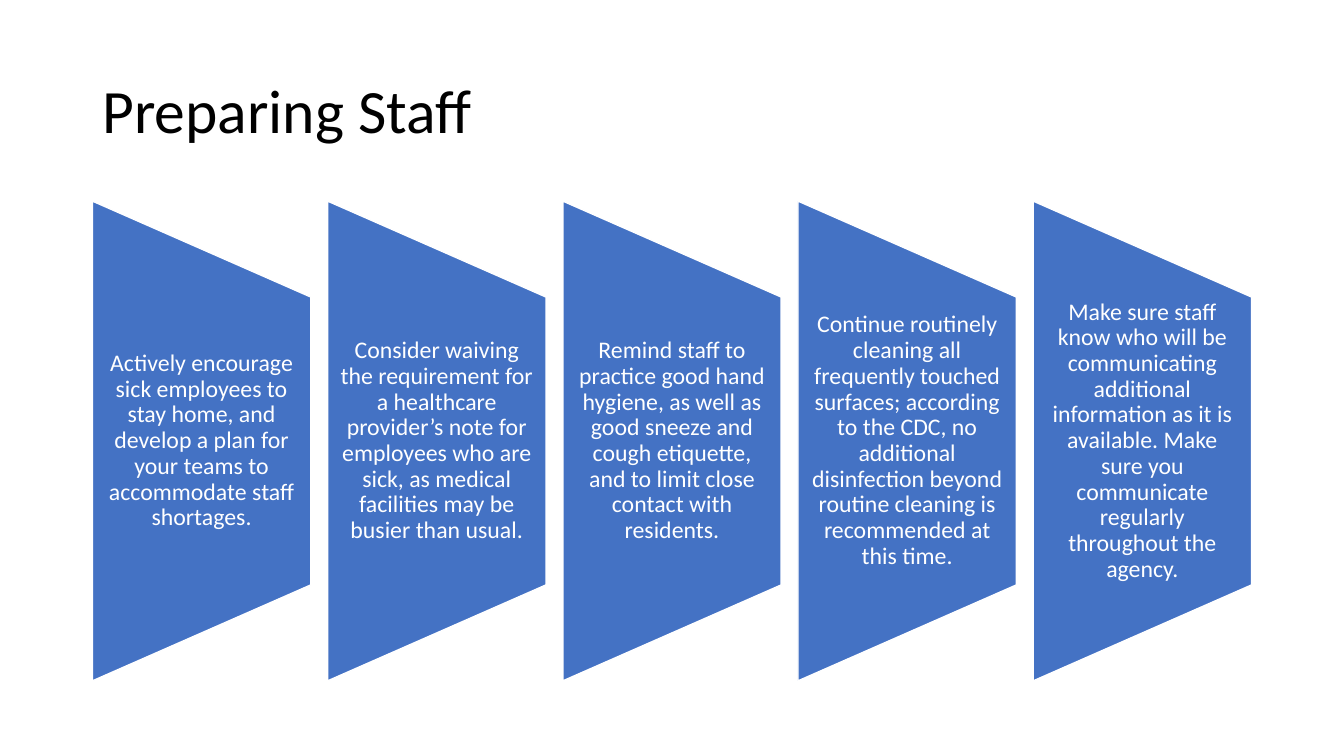
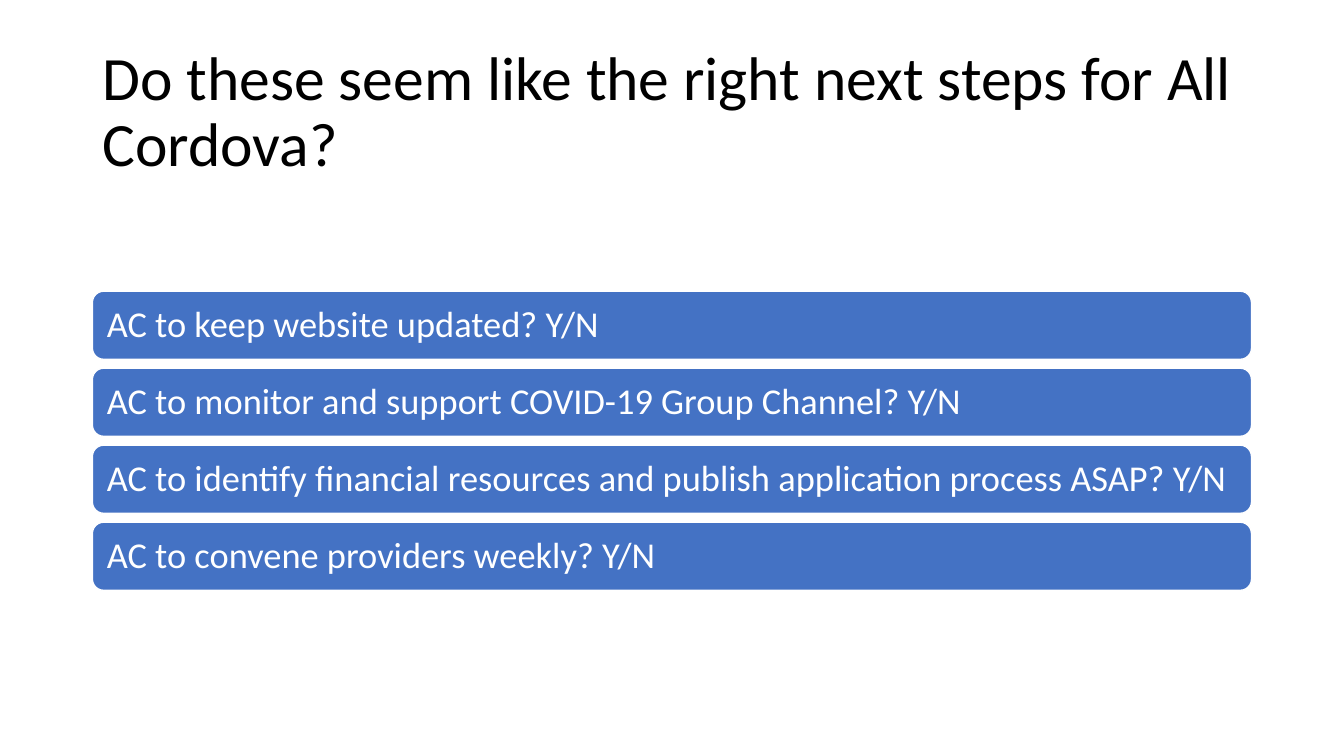
from dataclasses import dataclass

from pptx import Presentation
from pptx.dml.color import RGBColor
from pptx.enum.shapes import MSO_SHAPE as SHAPE
from pptx.enum.text import MSO_ANCHOR as ANCHOR, MSO_AUTO_SIZE as AUTO, PP_ALIGN as ALIGN
from pptx.shapes.autoshape import Shape
from pptx.slide import Slide
from pptx.util import Pt

BLACK, WHITE, BLUE = "000000", "FFFFFF", "4472C4"
FONT = "Calibri"
LEFT, WIDTH = 66, 828


@dataclass(frozen=True)
class Box:
    left: float
    top: float
    width: float
    height: float


@dataclass(frozen=True)
class TextStyle:
    size: float
    color: str
    align: ALIGN = ALIGN.LEFT
    inset_x: float = 7.2
    inset_y: float = 3.6


TITLE_BOX = Box(LEFT, 28.8, WIDTH, 104.4)
TITLE = TextStyle(44, BLACK)
PANEL = TextStyle(17, WHITE, ALIGN.CENTER, 8.6, 0)
BAR = TextStyle(26, WHITE, inset_x=8, inset_y=0)

PANEL_TOP, PANEL_WIDTH, PANEL_HEIGHT = 143.65, 156, 342.7
BAR_TOP, BAR_HEIGHT, BAR_PITCH = 208, 48.7, 55

STAFF_ACTIONS = [
    "Actively encourage sick employees to stay home, and develop a plan for your "
    "teams to accommodate staff shortages.",
    "Consider waiving the requirement for a healthcare provider’s note for employees "
    "who are sick, as medical facilities may be busier than usual.",
    "Remind staff to practice good hand hygiene, as well as good sneeze and cough "
    "etiquette, and to limit close contact with residents.",
    "Continue routinely cleaning all frequently touched surfaces; according to the "
    "CDC, no additional disinfection beyond routine cleaning is recommended at this time.",
    "Make sure staff know who will be communicating additional information as it is "
    "available. Make sure you communicate regularly throughout the agency.",
]
NEXT_STEPS = [
    "AC to keep website updated? Y/N",
    "AC to monitor and support COVID-19 Group Channel? Y/N",
    "AC to identify financial resources and publish application process ASAP? Y/N",
    "AC to convene providers weekly? Y/N",
]


def rgb(color: str) -> RGBColor:
    return RGBColor.from_string(color)


def set_all(target: object, values: dict) -> None:
    for name, value in values.items():
        setattr(target, name, value)


def pts(box: Box) -> tuple:
    return Pt(box.left), Pt(box.top), Pt(box.width), Pt(box.height)


def write(sp: Shape, text: str, style: TextStyle) -> None:
    tf = sp.text_frame
    set_all(tf, {
        "text": text, "word_wrap": True, "auto_size": AUTO.NONE,
        "vertical_anchor": ANCHOR.MIDDLE,
        "margin_left": Pt(style.inset_x), "margin_right": Pt(style.inset_x),
        "margin_top": Pt(style.inset_y), "margin_bottom": Pt(style.inset_y),
    })
    p = tf.paragraphs[0]
    set_all(p, {"alignment": style.align, "line_spacing": 0.9, "space_before": Pt(0)})
    r = p.runs[0]
    set_all(r.font, {"name": FONT, "size": Pt(style.size)})
    r.font.color.rgb = rgb(style.color)


def add_titled_slide(prs: Presentation, title: str) -> Slide:
    slide = prs.slides.add_slide(prs.slide_layouts.get_by_name("Title Only"))
    sp = slide.shapes.title
    set_all(sp, dict(zip(("left", "top", "width", "height"), pts(TITLE_BOX))))
    write(sp, title, TITLE)
    return slide


def add_blue_shape(slide: Slide, kind: SHAPE, box: Box) -> Shape:
    sp = slide.shapes.add_shape(kind, *pts(box))
    sp.shadow.inherit = False
    sp.fill.solid()
    sp.fill.fore_color.rgb = rgb(BLUE)
    sp.line.color.rgb = rgb(WHITE)
    sp.line.width = Pt(1)
    return sp


def add_panel(slide: Slide, left: float, text: str) -> None:
    """Draw a trapezoid turned on its side, with upright text in its middle three fifths."""
    shift = (PANEL_HEIGHT - PANEL_WIDTH) / 2
    sp = add_blue_shape(slide, SHAPE.FLOWCHART_MANUAL_OPERATION,
                        Box(left - shift, PANEL_TOP + shift, PANEL_HEIGHT, PANEL_WIDTH))
    sp.rotation = 270
    label = Box(left, PANEL_TOP + PANEL_HEIGHT / 5, PANEL_WIDTH, PANEL_HEIGHT * 3 / 5)
    write(slide.shapes.add_textbox(*pts(label)), text, PANEL)


def build_staff_slide(prs: Presentation) -> None:
    slide = add_titled_slide(prs, "Preparing Staff")
    pitch = (WIDTH - PANEL_WIDTH) / (len(STAFF_ACTIONS) - 1)
    for i, text in enumerate(STAFF_ACTIONS):
        add_panel(slide, LEFT + i * pitch, text)


def build_next_steps_slide(prs: Presentation) -> None:
    slide = add_titled_slide(prs, "Do these seem like the right next steps for All Cordova?")
    for i, text in enumerate(NEXT_STEPS):
        box = Box(LEFT, BAR_TOP + i * BAR_PITCH, WIDTH, BAR_HEIGHT)
        write(add_blue_shape(slide, SHAPE.ROUNDED_RECTANGLE, box), text, BAR)


def main() -> None:
    prs = Presentation()
    set_all(prs, {"slide_width": Pt(960), "slide_height": Pt(540)})
    build_staff_slide(prs)
    build_next_steps_slide(prs)
    prs.save("out.pptx")


if __name__ == "__main__":
    main()
